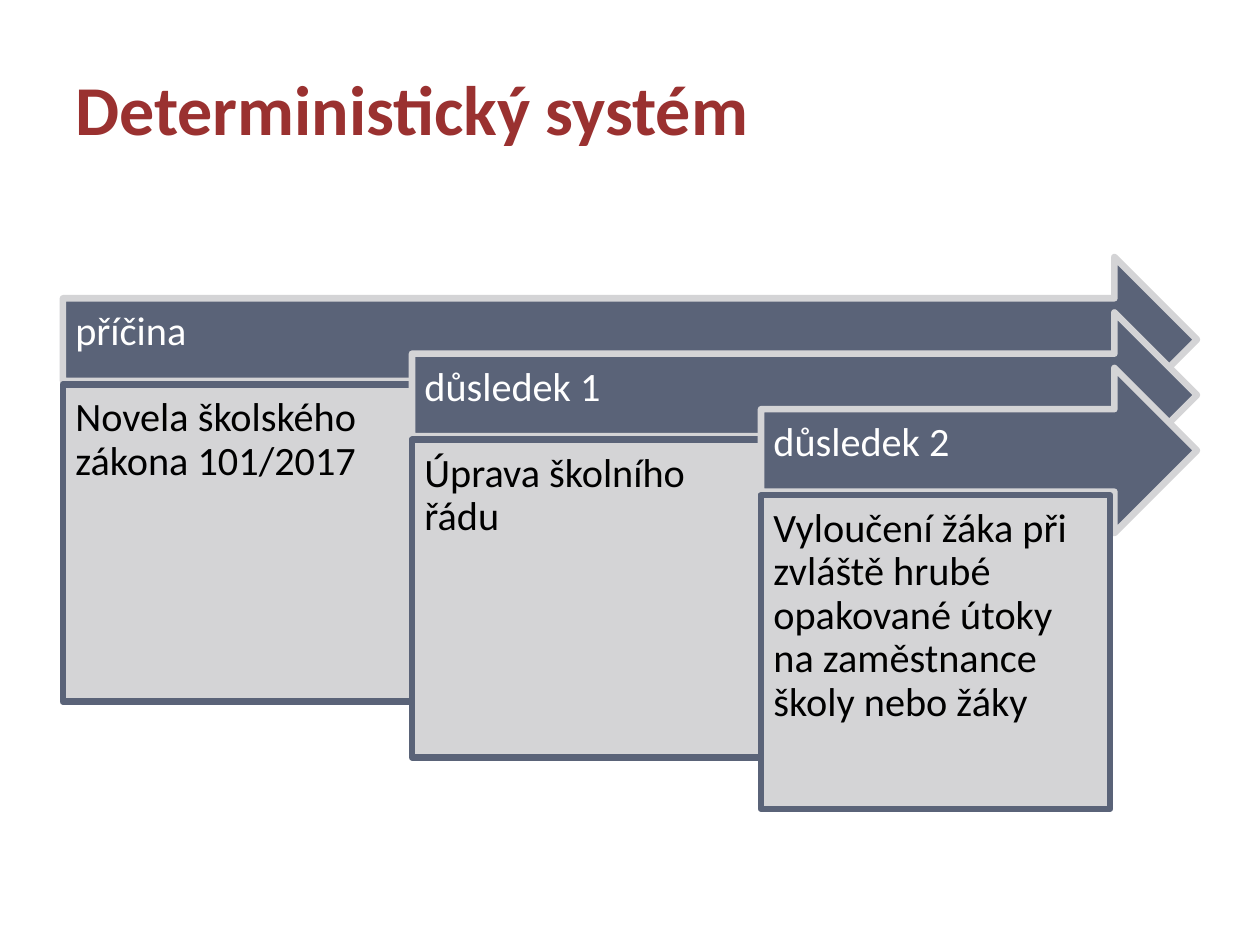
import pptx
import pptx.dml.color
import pptx.enum.shapes
import pptx.enum.text
import pptx.util

SLIDE_WIDTH, SLIDE_HEIGHT = 10, 7.5
COLORS = {
    "title": "9A3130",
    "slate": "5A6378",
    "silver": "D4D4D6",
    "white": "FFFFFF",
    "black": "000000",
}
FONT = "Calibri"
MARGIN = 0.05 * SLIDE_WIDTH
CONTENT_RIGHT = SLIDE_WIDTH - MARGIN
COLUMN_WIDTH = 2.77
ROW_STEP = 0.44
FIRST_ARROW_TOP = 2.04
ARROW_HEIGHT = 1.31
BOX_OFFSET = 1.01
STAGES = [
    ("příčina", "Novela školského zákona 101/2017", 2.52),
    ("důsledek 1", "Úprava školního řádu", 2.52),
    ("důsledek 2", "Vyloučení žáka při zvláště hrubé opakované útoky "
                   "na zaměstnance školy nebo žáky", 2.49),
]


def rgb(name):
    return pptx.dml.color.RGBColor.from_string(COLORS[name])


def inches(*lengths):
    return [pptx.util.Inches(length) for length in lengths]


def write_text(shape, text, size, color, anchor, insets, bold=False):
    frame = shape.text_frame
    frame.text = text
    frame.word_wrap = True
    frame.vertical_anchor = anchor
    (frame.margin_left, frame.margin_top,
     frame.margin_right, frame.margin_bottom) = inches(*insets)
    paragraph = frame.paragraphs[0]
    paragraph.alignment = pptx.enum.text.PP_ALIGN.LEFT
    font = paragraph.runs[0].font
    font.name = FONT
    font.size = pptx.util.Pt(size)
    font.bold = bold
    font.color.rgb = rgb(color)
    return paragraph


def add_title(slide, text):
    shape = slide.shapes.add_textbox(
        *inches(MARGIN, 0.17, CONTENT_RIGHT - MARGIN, 1.37))
    write_text(shape, text, 40, "title", pptx.enum.text.MSO_ANCHOR.MIDDLE,
               (0.1, 0.05, 0.05, 0.05), bold=True)


def add_panel(slide, kind, place, fill, line, text, color, anchor, insets):
    shape = slide.shapes.add_shape(kind, *inches(*place))
    shape.shadow.inherit = False
    shape.fill.solid()
    shape.fill.fore_color.rgb = rgb(fill)
    shape.line.color.rgb = rgb(line)
    shape.line.width = pptx.util.Pt(3.78)
    paragraph = write_text(shape, text, 23, color, anchor, insets)
    paragraph.line_spacing = 0.9
    paragraph.space_after = pptx.util.Pt(8)


def add_stage(slide, index, label, detail, box_height):
    shapes = pptx.enum.shapes.MSO_SHAPE
    anchors = pptx.enum.text.MSO_ANCHOR
    left = MARGIN + index * COLUMN_WIDTH
    top = FIRST_ARROW_TOP + index * ROW_STEP
    add_panel(slide, shapes.RIGHT_ARROW,
              (left, top, CONTENT_RIGHT - left, ARROW_HEIGHT),
              "slate", "silver", label, "white",
              anchors.MIDDLE, (0.1, 0.1, 0.28, 0.21))
    add_panel(slide, shapes.RECTANGLE,
              (left, top + BOX_OFFSET, COLUMN_WIDTH, box_height),
              "silver", "slate", detail, "black",
              anchors.TOP, (0.1, 0.1, 0.1, 0.1))


def main():
    presentation = pptx.Presentation()
    presentation.slide_width, presentation.slide_height = inches(
        SLIDE_WIDTH, SLIDE_HEIGHT)
    slide = presentation.slides.add_slide(presentation.slide_layouts[6])
    add_title(slide, "Deterministický systém")
    for index, stage in enumerate(STAGES):
        add_stage(slide, index, *stage)
    presentation.save("out.pptx")


if __name__ == "__main__":
    main()
